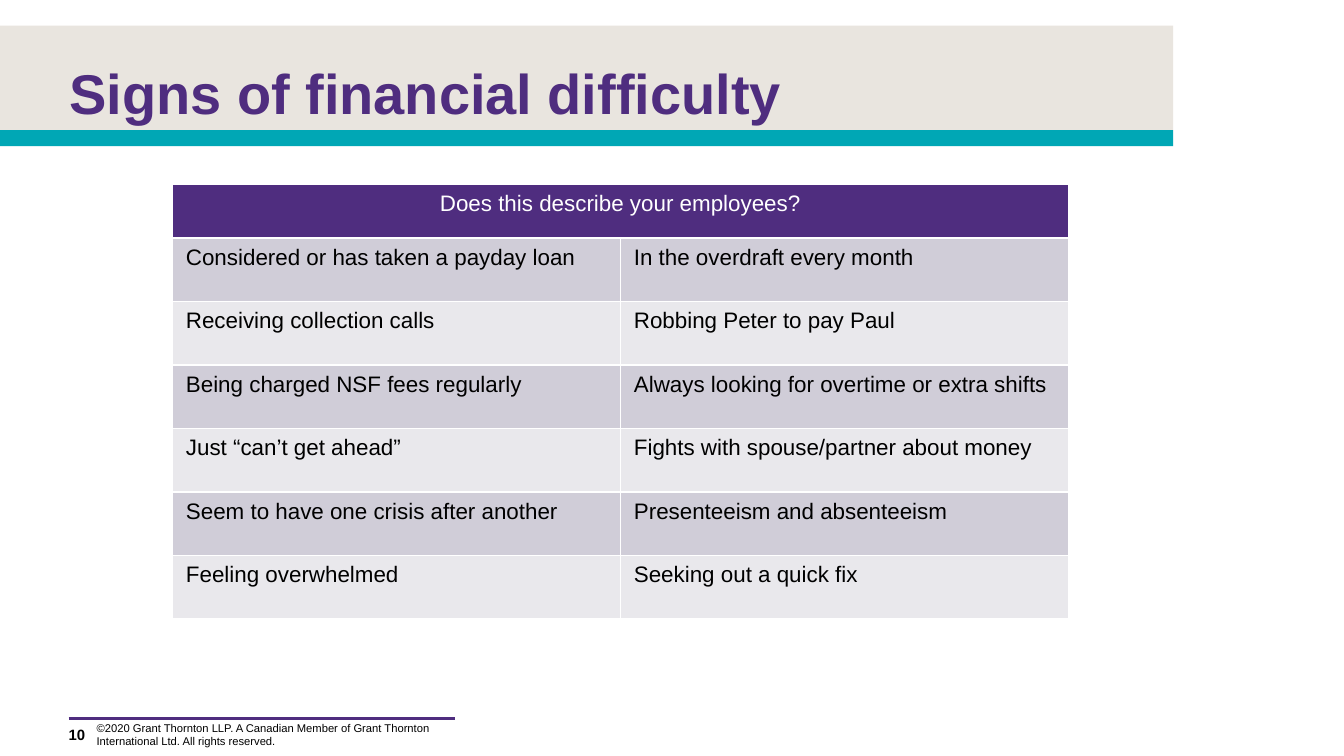
"""Build a slide listing signs of financial difficulty in a table."""
from lxml import etree
from pptx import Presentation
from pptx.dml.color import RGBColor
from pptx.enum import shapes, text
from pptx.oxml.ns import qn
from pptx.util import Pt

HUES = {
    "plum": "4F2D7F", "sand": "E9E5DF", "teal": "00A7B5",
    "dark": "D0CDD8", "light": "E9E8EC", "white": "FFFFFF", "black": "000000",
}
FONT = "Arial"
SIGNS = [
    ("Considered or has taken a payday loan", "In the overdraft every month"),
    ("Receiving collection calls", "Robbing Peter to pay Paul"),
    ("Being charged NSF fees regularly", "Always looking for overtime or extra shifts"),
    ("Just “can’t get ahead”", "Fights with spouse/partner about money"),
    ("Seem to have one crisis after another", "Presenteeism and absenteeism"),
    ("Feeling overwhelmed", "Seeking out a quick fix"),
]


def hue(name):
    """Return a named colour."""
    return RGBColor.from_string(HUES[name])


def write(frame, words, size, tint, bold=False, align=text.PP_ALIGN.LEFT):
    """Add one run to the first paragraph of a frame."""
    para = frame.paragraphs[0]
    para.alignment = align
    run = para.add_run()
    run.text = words
    font = run.font
    font.name, font.size, font.bold = FONT, Pt(size), bold
    font.color.rgb = hue(tint)


def inset(frame, top=0, base=0):
    """Wrap a frame and set its margins, with none at the sides."""
    frame.word_wrap = True
    frame.margin_left = frame.margin_right = 0
    frame.margin_top, frame.margin_bottom = Pt(top), Pt(base)


def band(slide, box, tint):
    """Draw a plain filled bar in the box."""
    bar = slide.shapes.add_shape(shapes.MSO_SHAPE.RECTANGLE, *map(Pt, box))
    bar.shadow.inherit = False
    bar.fill.solid()
    bar.fill.fore_color.rgb = hue(tint)
    bar.line.fill.background()


def header(slide, box, words):
    """Place two bars and the title over them."""
    left, top, width, height = box
    strip = 8.5
    band(slide, (left, top, width, height - strip), "sand")
    band(slide, (left, top + height - strip, width, strip), "teal")
    title = slide.shapes.title
    title.left, title.top = Pt(left + 37.2), Pt(top + 14.4)
    title.width, title.height = Pt(646), Pt(66)
    frame = title.text_frame
    inset(frame, top=3)
    frame.auto_size = text.MSO_AUTO_SIZE.NONE
    frame.vertical_anchor = text.MSO_ANCHOR.TOP
    write(frame, words, 30, "plum", bold=True)
    slide.shapes._spTree.append(title._element)


def edge(cell):
    """Give a cell thin white borders."""
    props = cell._tc.get_or_add_tcPr()
    for spot, side in enumerate(("a:lnL", "a:lnR", "a:lnT", "a:lnB")):
        line = etree.Element(qn(side), w=str(Pt(1)))
        fill = etree.SubElement(line, qn("a:solidFill"))
        etree.SubElement(fill, qn("a:srgbClr"), val=HUES["white"])
        props.insert(spot, line)


def paint(cell, tint):
    """Fill and border a cell."""
    cell.fill.solid()
    cell.fill.fore_color.rgb = hue(tint)
    edge(cell)


def grid(slide, box, head, rows):
    """Place a table with a merged heading and striped rows."""
    top = 28.6
    step = (box[3] - top) / len(rows)
    table = slide.shapes.add_table(len(rows) + 1, 2, *map(Pt, box)).table
    for col in table.columns:
        col.width = Pt(box[2] / 2)
    for num, row in enumerate(table.rows):
        row.height = Pt(step if num else top)
    for cell in table.rows[0].cells:
        paint(cell, "plum")
    first = table.cell(0, 0)
    first.merge(table.cell(0, 1))
    write(first.text_frame, head, 12, "white", align=text.PP_ALIGN.CENTER)
    for num, pair in enumerate(rows, 1):
        for col, words in enumerate(pair):
            cell = table.cell(num, col)
            paint(cell, "dark" if num % 2 else "light")
            write(cell.text_frame, words, 12, "black")


def label(slide, box, words, size, bold=False, pad=0):
    """Place a small line of text, centred upright in the box."""
    frame = slide.shapes.add_textbox(*map(Pt, box)).text_frame
    inset(frame, pad, pad)
    frame.vertical_anchor = text.MSO_ANCHOR.MIDDLE
    write(frame, words, size, "black", bold)


def footer(slide, box, page, words):
    """Place a rule with the page number and copyright below it."""
    left, top, width, height = box
    rule = slide.shapes.add_connector(
        shapes.MSO_CONNECTOR.STRAIGHT, *map(Pt, (left, top, left + width, top)))
    rule.line.color.rgb = hue("plum")
    rule.line.width = Pt(1.5)
    etree.SubElement(rule._element.spPr, qn("a:effectLst"))
    label(slide, (left, top + 1.5, 14.4, height), page, 8, bold=True)
    label(slide, (left + 15, top + 1.2, 190, height), words, 6, pad=3.6)


def main():
    """Build and save the deck."""
    deck = Presentation()
    deck.slide_width, deck.slide_height = Pt(720), Pt(405)
    slide = deck.slides.add_slide(deck.slide_layouts[5])
    header(slide, (0, 13.7, 628.5, 64.6), "Signs of financial difficulty")
    grid(slide, (92.4, 98.9, 480, 233), "Does this describe your employees?", SIGNS)
    footer(slide, (36.8, 385, 207.2, 14.4), "10",
           "©2020 Grant Thornton LLP. A Canadian Member of Grant Thornton "
           "International Ltd. All rights reserved.")
    deck.save("out.pptx")


if __name__ == "__main__":
    main()
